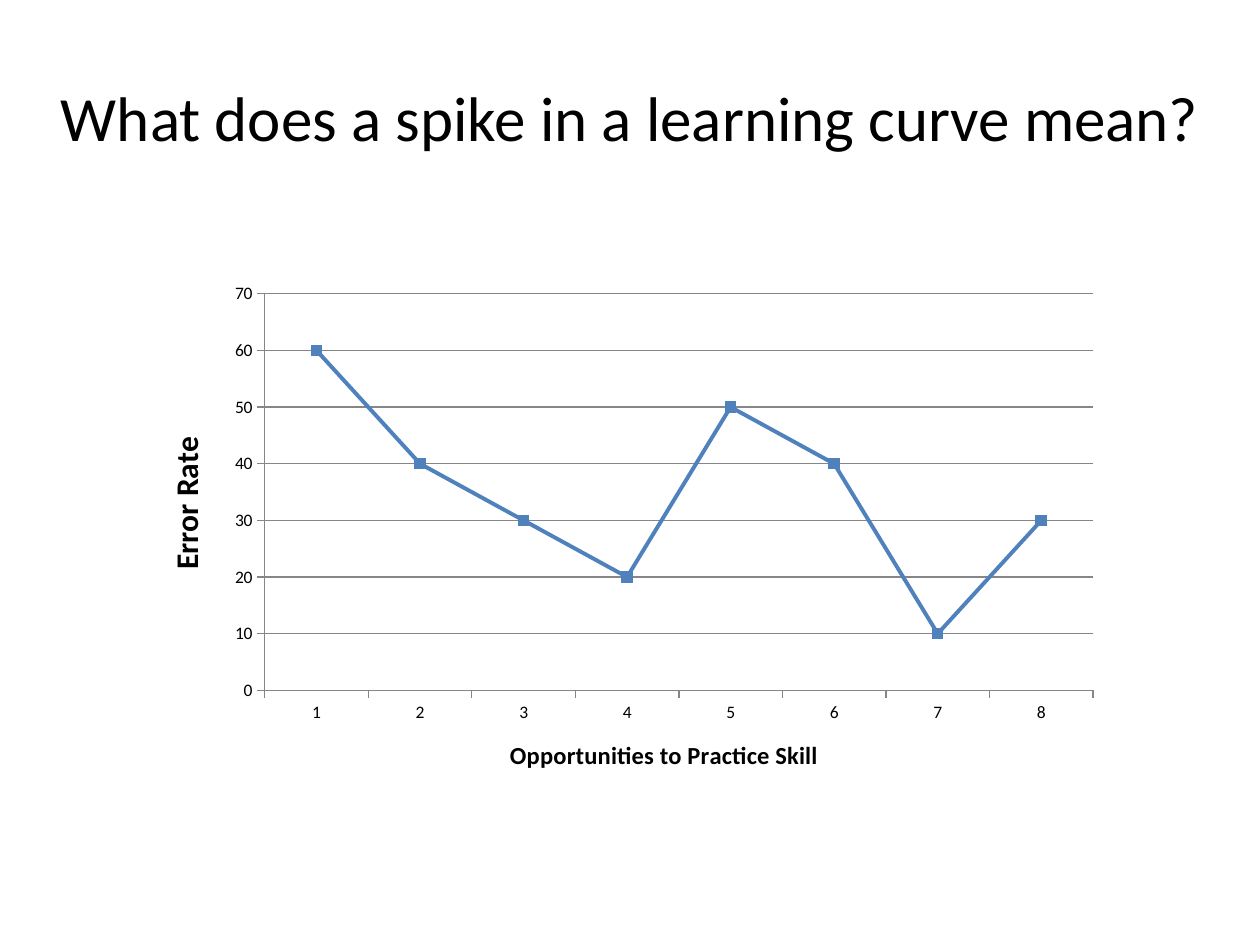
"""Build a slide asking what a spike in a learning curve means."""
from dataclasses import dataclass
from typing import Any

import pptx
import pptx.chart.data
import pptx.dml.color
import pptx.enum.chart
import pptx.enum.text
import pptx.util

Inches = pptx.util.Inches
Pt = pptx.util.Pt
BLACK = pptx.dml.color.RGBColor(0x00, 0x00, 0x00)
GRAY = pptx.dml.color.RGBColor(0x86, 0x86, 0x86)
BLUE = pptx.dml.color.RGBColor(0x4F, 0x81, 0xBD)
FONT = "Calibri"
ERROR_RATES = (60, 40, 30, 20, 50, 40, 10, 30)


@dataclass(frozen=True)
class AxisStyle:
    title: str
    size: int
    rotation: int
    gridlines: bool


OPPORTUNITIES = AxisStyle("Opportunities to Practice Skill", 14, 0, False)
ERROR_RATE = AxisStyle("Error Rate", 18, -90, True)


def write(frame: Any, text: str, *, size: int, bold: bool = False) -> None:
    para = frame.paragraphs[0]
    para.alignment = pptx.enum.text.PP_ALIGN.CENTER
    span = para.add_run()
    span.text = text
    span.font.name = FONT
    span.font.size = Pt(size)
    span.font.bold = bold
    span.font.color.rgb = BLACK


def add_heading(page: Any, text: str) -> None:
    box = page.shapes.add_textbox(Inches(0), Inches(0.3), Inches(10), Inches(1.25))
    box.text_frame.word_wrap = True
    box.text_frame.vertical_anchor = pptx.enum.text.MSO_ANCHOR.MIDDLE
    write(box.text_frame, text, size=36)


def style_axis(axis: Any, style: AxisStyle) -> None:
    axis.major_tick_mark = pptx.enum.chart.XL_TICK_MARK.OUTSIDE
    axis.minor_tick_mark = pptx.enum.chart.XL_TICK_MARK.NONE
    axis.format.line.color.rgb = GRAY
    axis.format.line.width = Pt(0.75)
    axis.has_major_gridlines = style.gridlines
    if style.gridlines:
        axis.major_gridlines.format.line.color.rgb = GRAY
        axis.major_gridlines.format.line.width = Pt(0.75)
    title = axis.axis_title
    write(title.text_frame, style.title, size=style.size, bold=True)
    for body in title.element.xpath(".//a:bodyPr"):
        body.set("rot", str(style.rotation * 60000))
        body.set("vert", "horz")


def add_learning_curve(page: Any) -> None:
    data = pptx.chart.data.CategoryChartData()
    data.categories = [str(number) for number in range(1, len(ERROR_RATES) + 1)]
    data.add_series("Series 1", ERROR_RATES)
    chart = page.shapes.add_chart(
        pptx.enum.chart.XL_CHART_TYPE.LINE_MARKERS,
        Inches(1.08), Inches(2.17), Inches(7.75), Inches(4.17), data,
    ).chart
    chart.has_title = False
    chart.has_legend = False
    chart.font.name = FONT
    chart.font.size = Pt(10)
    chart.font.color.rgb = BLACK
    style_axis(chart.category_axis, OPPORTUNITIES)
    style_axis(chart.value_axis, ERROR_RATE)
    chart.value_axis.minimum_scale = 0
    chart.value_axis.maximum_scale = 70
    chart.value_axis.major_unit = 10
    chart.plots[0].vary_by_categories = False
    curve = chart.plots[0].series[0]
    curve.smooth = False
    curve.format.line.color.rgb = BLUE
    curve.format.line.width = Pt(2.25)
    curve.marker.style = pptx.enum.chart.XL_MARKER_STYLE.SQUARE
    curve.marker.size = 6
    curve.marker.format.fill.solid()
    curve.marker.format.fill.fore_color.rgb = BLUE
    curve.marker.format.line.color.rgb = BLUE


def main() -> None:
    deck = pptx.Presentation()
    deck.slide_width = Inches(10)
    deck.slide_height = Inches(7.5)
    page = deck.slides.add_slide(deck.slide_layouts[6])
    add_heading(page, "What does a spike in a learning curve mean?")
    add_learning_curve(page)
    deck.save("out.pptx")


if __name__ == "__main__":
    main()
